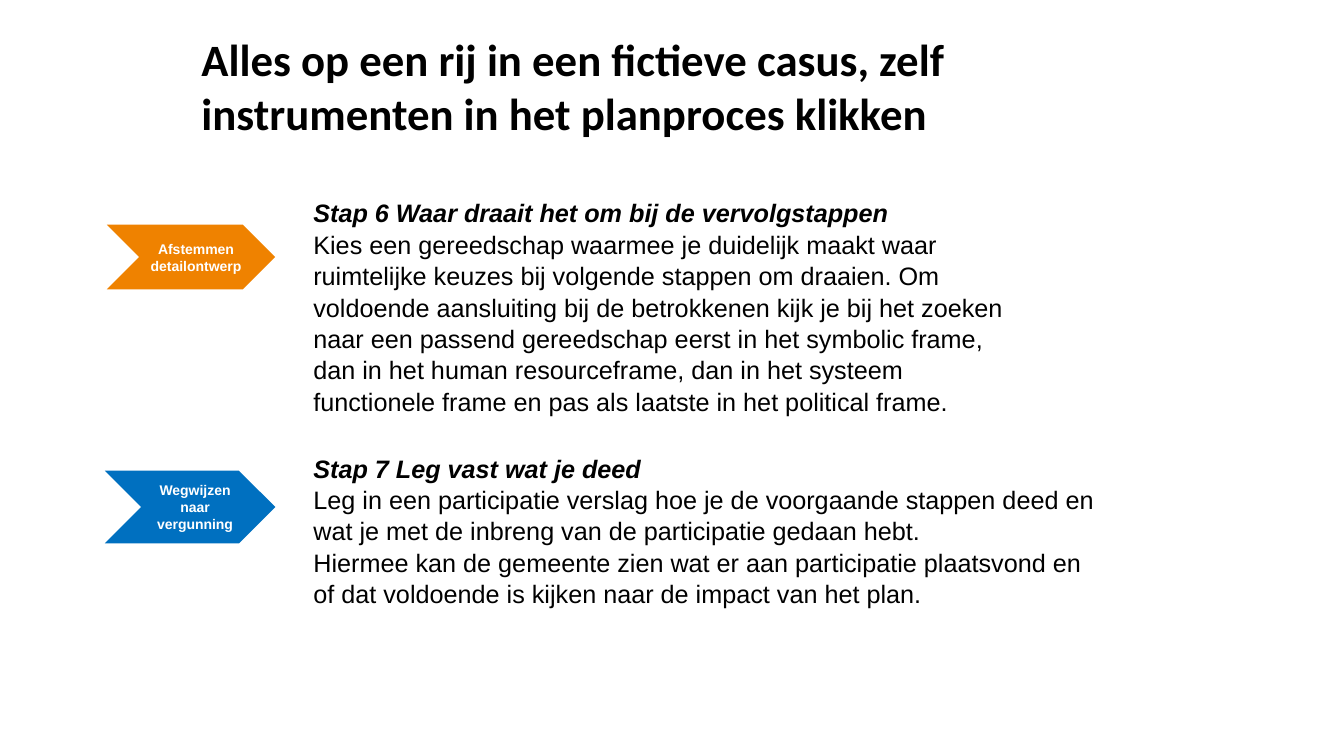
from pptx import Presentation
from pptx.dml.color import RGBColor
from pptx.enum.shapes import MSO_SHAPE
from pptx.enum.text import MSO_ANCHOR, PP_ALIGN
from pptx.util import Inches, Pt

TITLE = "Alles op een rij in een fictieve casus, zelf instrumenten in het planproces klikken"
STEPS = [
    {
        "label": ["Afstemmen detailontwerp"],
        "color": "EF8200",
        "chevron_box": (1.06, 2.23, 1.67, 0.64),
        "heading": "Stap 6 Waar draait het om bij de vervolgstappen",
        "body": [
            "Kies een gereedschap waarmee je duidelijk maakt waar ruimtelijke keuzes "
            "bij volgende stappen om draaien. Om voldoende aansluiting bij de "
            "betrokkenen kijk je bij het zoeken naar een passend gereedschap eerst in "
            "het symbolic frame, dan in het human resourceframe, dan in het systeem "
            "functionele frame en pas als laatste in het political frame.",
        ],
        "text_box": (3.01, 1.93, 7.16, 2.22),
    },
    {
        "label": ["Wegwijzen naar", "vergunning"],
        "color": "0070C0",
        "chevron_box": (1.04, 4.67, 1.69, 0.72),
        "heading": "Stap 7 Leg vast wat je deed",
        "body": [
            "Leg in een participatie verslag hoe je de voorgaande stappen deed en wat "
            "je met de inbreng van de participatie gedaan hebt.",
            "Hiermee kan de gemeente zien wat er aan participatie plaatsvond en of dat "
            "voldoende is kijken naar de impact van het plan.",
        ],
        "text_box": (3.01, 4.45, 7.98, 1.62),
    },
]


def rgb(color):
    """Return the colour for a hex string."""
    return RGBColor.from_string(color)


def write(frame, text, size=18, font="Arial", color="000000", bold=False,
          italic=False, align=PP_ALIGN.LEFT, spacing=1.0):
    """Add one formatted paragraph to a text frame."""
    first = frame.paragraphs[0]
    paragraph = frame.add_paragraph() if first.runs else first
    paragraph.alignment = align
    paragraph.line_spacing = spacing
    run = paragraph.add_run()
    run.text = text
    run.font.size = Pt(size)
    run.font.name = font
    run.font.bold = bold
    run.font.italic = italic
    run.font.color.rgb = rgb(color)


def add_text_box(slide, box, anchor=MSO_ANCHOR.TOP):
    """Add a wrapping text box and return its text frame."""
    frame = slide.shapes.add_textbox(*map(Inches, box)).text_frame
    frame.word_wrap = True
    frame.vertical_anchor = anchor
    return frame


def add_chevron(slide, box, color, label):
    """Add a filled chevron with a centred white label."""
    shape = slide.shapes.add_shape(MSO_SHAPE.CHEVRON, *map(Inches, box))
    shape.shadow.inherit = False
    shape.fill.solid()
    shape.fill.fore_color.rgb = rgb(color)
    shape.line.fill.background()
    frame = shape.text_frame
    frame.word_wrap = True
    frame.vertical_anchor = MSO_ANCHOR.MIDDLE
    frame.margin_left, frame.margin_right = Inches(0.1), Inches(0)
    frame.margin_top = frame.margin_bottom = Inches(0.07)
    for text in label:
        write(frame, text, size=10, color="FFFFFF", bold=True, align=PP_ALIGN.CENTER)


def add_step(slide, step):
    """Add the chevron and explanation of one step."""
    add_chevron(slide, step["chevron_box"], step["color"], step["label"])
    frame = add_text_box(slide, step["text_box"], MSO_ANCHOR.MIDDLE)
    write(frame, step["heading"], bold=True, italic=True, spacing=1.04)
    for text in step["body"]:
        write(frame, text, spacing=1.04)


def main():
    """Build the slide and save it."""
    presentation = Presentation()
    presentation.slide_width = Inches(13.33)
    presentation.slide_height = Inches(7.5)
    slide = presentation.slides.add_slide(presentation.slide_layouts[6])
    title = add_text_box(slide, (1.9, 0.27, 9.53, 1.18))
    write(title, TITLE, size=32, font="Calibri", bold=True)
    for step in STEPS:
        add_step(slide, step)
    presentation.save("out.pptx")


if __name__ == "__main__":
    main()
